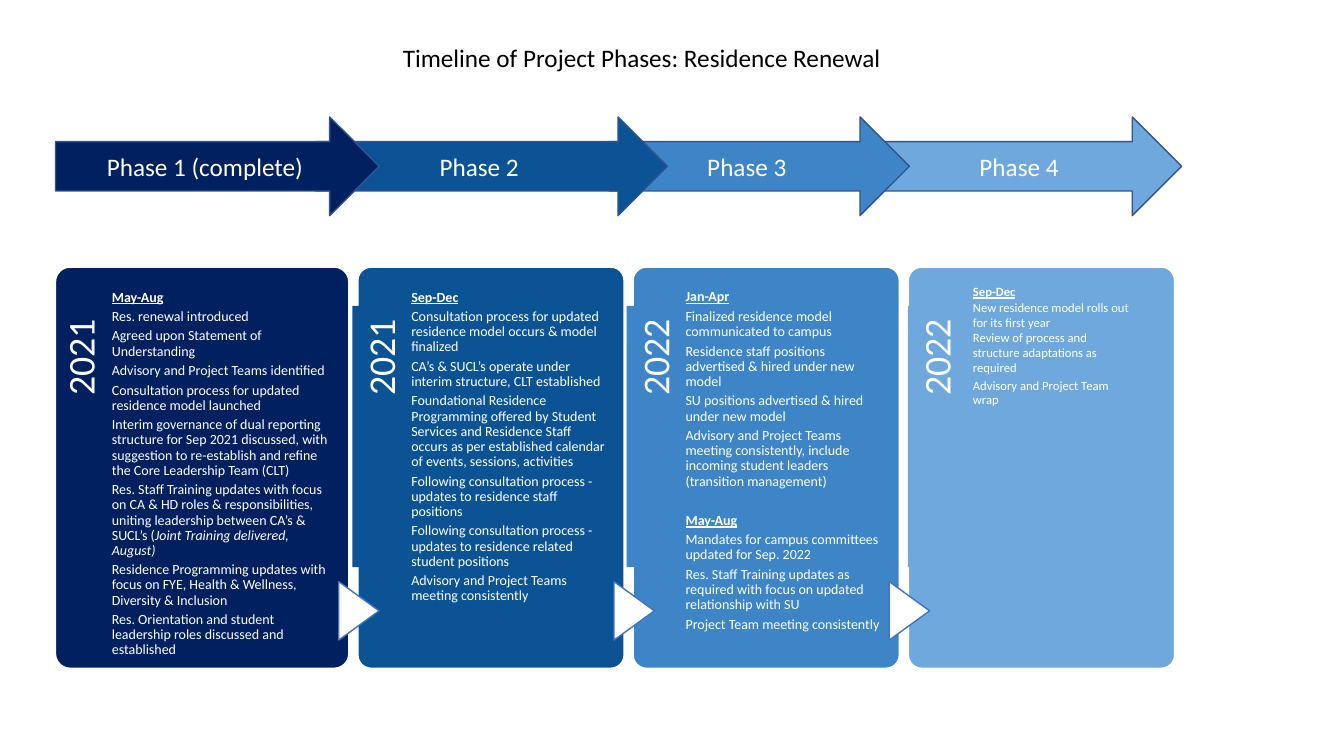
"""Build the residence renewal timeline slide."""
from dataclasses import dataclass

from pptx import Presentation
from pptx.dml.color import RGBColor
from pptx.enum.shapes import MSO_SHAPE as Shp
from pptx.enum.text import MSO_ANCHOR as Anchor, MSO_AUTO_SIZE as AutoSize, PP_ALIGN as Align
from pptx.util import Inches, Pt

CELL = Inches(0.1)


@dataclass(frozen=True)
class Theme:
    font: str = "Calibri"
    white: str = "FFFFFF"
    black: str = "000000"
    arrow_line: str = "31538F"
    marker_line: str = "4372C3"
    title: float = 18
    year: float = 27
    line: float = 1
    leading: float = 0.9
    gap: float = 3.1
    section_gap: float = 17.2


@dataclass(frozen=True)
class Phase:
    name: str
    year: str
    color: str
    arrow: tuple
    card: tuple
    year_mid: float
    area: tuple
    sections: list
    size: float = 10
    year_filled: bool = True
    area_filled: bool = False
    marker: bool = True
    plain: int = 0


THEME = Theme()
PHASES = [
    Phase("Phase 1 (complete)", "2021", "002060", (5.5, 32.1), (5.5, 29.1), 8.8,
          (11.1, 28.76, 21.7, 37.5), [
              ("May-Aug", [
                  "Res. renewal introduced",
                  "Agreed upon Statement of Understanding",
                  "Advisory and Project Teams identified",
                  "Consultation process for updated residence model launched",
                  "Interim governance of dual reporting structure for Sep 2021 discussed, with "
                  "suggestion to re-establish and refine the Core Leadership Team (CLT)",
                  ("Res. Staff Training updates with focus on CA & HD roles & responsibilities, "
                   "uniting leadership between CA’s & SUCL’s (", "Joint Training delivered, August)"),
                  "Residence Programming updates with focus on FYE, Health & Wellness, "
                  "Diversity & Inclusion",
                  "Res. Orientation and student leadership roles discussed and established"])],
          year_filled=False, marker=False),
    Phase("Phase 2", "2021", "0B5394", (31.3, 34.9), (35.5, 26.4), 38.6,
          (40.8, 28.76, 19.6, 37.5), [
              ("Sep-Dec", [
                  "Consultation process for updated residence model occurs & model finalized",
                  "CA’s & SUCL’s operate under interim structure, CLT established",
                  "Foundational Residence Programming offered by Student Services and Residence "
                  "Staff occurs as per established calendar of events, sessions, activities",
                  "Following consultation process - updates to residence staff positions",
                  "Following consultation process - updates to residence related student positions",
                  "Advisory and Project Teams meeting consistently"])]),
    Phase("Phase 3", "2022", "3D85C6", (60.4, 29.8), (62.8, 26.4), 65.8,
          (68, 28.76, 19.6, 36.4), [
              ("Jan-Apr", [
                  "Finalized residence model communicated to campus",
                  "Residence staff positions advertised & hired under new model",
                  "SU positions advertised & hired under new model",
                  "Advisory and Project Teams meeting consistently, include incoming student "
                  "leaders (transition management)"]),
              ("May-Aug", [
                  "Mandates for campus committees updated for Sep. 2022",
                  "Res. Staff Training updates as required with focus on updated relationship with SU",
                  "Project Team meeting consistently"])],
          area_filled=True),
    Phase("Phase 4", "2022", "6FA8DC", (87.4, 29.8), (90.1, 26.4), 93.7,
          (96.5, 28.2, 15.5, 20), [
              ("Sep-Dec", [
                  "New residence model rolls out for its first year",
                  "Review of process and structure adaptations as required",
                  "Advisory and Project Team wrap"])],
          size=9, area_filled=True, plain=3),
]


def cells(*values):
    """Convert grid columns and rows to lengths."""
    return [int(v * CELL) for v in values]


def style_run(r, size, color=THEME.white):
    """Set the font of a run."""
    r.font.name, r.font.size = THEME.font, Pt(size)
    r.font.color.rgb = RGBColor.from_string(color)


def set_frame(tf, insets=(0, 0, 0, 0), anchor=Anchor.TOP):
    """Set wrapping, insets in cells and anchor of a text frame."""
    tf.word_wrap, tf.auto_size, tf.vertical_anchor = True, AutoSize.NONE, anchor
    tf.margin_left, tf.margin_top, tf.margin_right, tf.margin_bottom = cells(*insets)


def set_label(tf, text, size, align, color=THEME.white):
    """Write one aligned line of text."""
    tf.text = text
    p = tf.paragraphs[0]
    p.alignment = align
    style_run(p.runs[0], size, color)
    return p


def add_block(s, kind, box, fill, line=None):
    """Add a flat preset shape on the grid."""
    sp = s.shapes.add_shape(kind, *cells(*box))
    sp.shadow.inherit = False
    sp.fill.solid()
    sp.fill.fore_color.rgb = RGBColor.from_string(fill)
    if line:
        sp.line.color.rgb = RGBColor.from_string(line)
        sp.line.width = Pt(THEME.line)
    else:
        sp.line.fill.background()
    return sp


def add_text_area(s, box, fill=None):
    """Add a text box, or a filled rectangle when a fill is given."""
    if fill:
        return add_block(s, Shp.RECTANGLE, box, fill)
    return s.shapes.add_textbox(*cells(*box))


def add_title(s, text):
    """Place and format the title placeholder."""
    sp = s.shapes.title
    sp.left, sp.top, sp.width, sp.height = cells(7.2, 3.7, 112.9, 4)
    set_frame(sp.text_frame, (1, 0.5, 1, 0.5))
    set_label(sp.text_frame, text, THEME.title, Align.CENTER, THEME.black)


def add_arrow(s, phase):
    """Add the arrow that names a phase."""
    left, width = phase.arrow
    sp = add_block(s, Shp.RIGHT_ARROW, (left, 11.6, width, 9.8), phase.color, THEME.arrow_line)
    set_frame(sp.text_frame, (1, 0.5, 1, 0.5), Anchor.MIDDLE)
    set_label(sp.text_frame, phase.name, THEME.title, Align.CENTER)


def add_year(s, phase):
    """Add the rotated year of a phase."""
    length, depth = 25.9, 7.3
    box = (phase.year_mid - length / 2, 43.3 - depth / 2, length, depth)
    sp = add_text_area(s, box, phase.color if phase.year_filled else None)
    sp.rotation = 270
    set_frame(sp.text_frame, (0, 1, 1.3, 0))
    set_label(sp.text_frame, phase.year, THEME.year, Align.RIGHT).line_spacing = THEME.leading


def add_activities(s, phase):
    """Add the dated activity list of a phase."""
    sp = add_text_area(s, phase.area, phase.color if phase.area_filled else None)
    tf = sp.text_frame
    set_frame(tf)
    lines = [(text, text == head) for head, items in phase.sections for text in (head, *items)]
    for i, (text, is_head) in enumerate(lines):
        p = tf.add_paragraph() if i else tf.paragraphs[0]
        p.alignment = Align.LEFT
        if i >= phase.plain:
            p.line_spacing = THEME.leading
            p.space_before = Pt(0 if i == 0 else THEME.section_gap if is_head else THEME.gap)
        for n, piece in enumerate(text if isinstance(text, tuple) else (text,)):
            r = p.add_run()
            r.text = piece
            style_run(r, phase.size)
            r.font.bold = r.font.underline = is_head
            r.font.italic = n == 1


def add_card(s, phase):
    """Add the card of a phase with its year, marker and activities."""
    left, width = phase.card
    sp = add_block(s, Shp.ROUNDED_RECTANGLE, (left, 26.5, width, 39.8), phase.color, THEME.white)
    sp.adjustments[0] = 0.05
    add_year(s, phase)
    if phase.marker:
        box = (left - 2.8, 58.6, 5.8, 4)
        add_block(s, Shp.FLOWCHART_EXTRACT, box, THEME.white, THEME.marker_line).rotation = 90
    add_activities(s, phase)


def main():
    """Build and save the slide."""
    prs = Presentation()
    prs.slide_width, prs.slide_height = Inches(13.33), Inches(7.5)
    s = prs.slides.add_slide(prs.slide_layouts[5])
    add_title(s, "Timeline of Project Phases: Residence Renewal")
    for phase in reversed(PHASES):
        add_arrow(s, phase)
    for phase in PHASES:
        add_card(s, phase)
    prs.save("out.pptx")


if __name__ == "__main__":
    main()
